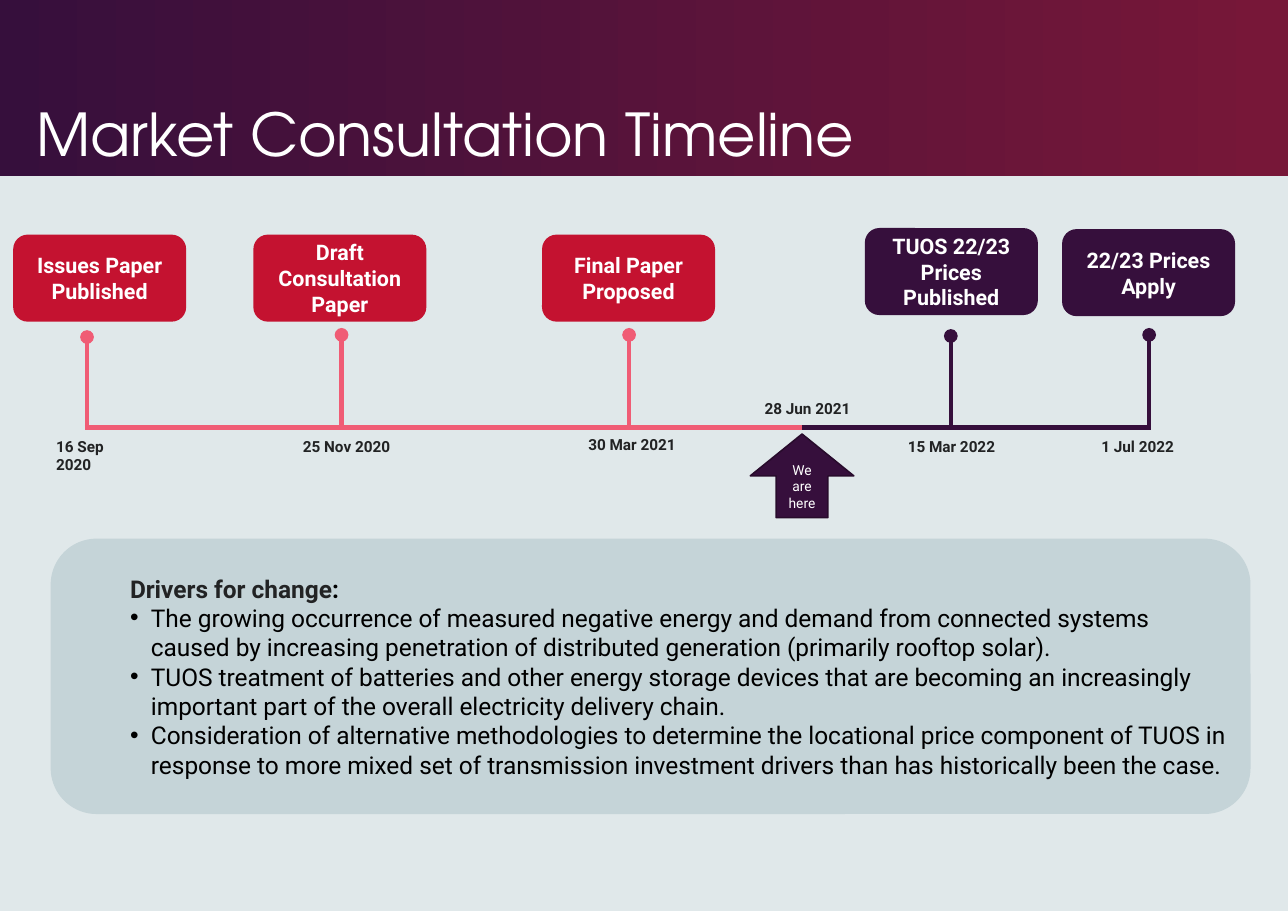
from dataclasses import dataclass

from lxml import etree
from pptx import Presentation
from pptx.dml.color import RGBColor
from pptx.enum.shapes import MSO_CONNECTOR, MSO_SHAPE
from pptx.enum.text import MSO_ANCHOR, MSO_AUTO_SIZE, PP_ALIGN
from pptx.oxml.ns import qn
from pptx.util import Inches, Pt

STRAIGHT = MSO_CONNECTOR.STRAIGHT
RECTANGLE = MSO_SHAPE.RECTANGLE
ROUNDED = MSO_SHAPE.ROUNDED_RECTANGLE
PANEL = MSO_SHAPE.FLOWCHART_ALTERNATE_PROCESS
UP_ARROW = MSO_SHAPE.UP_ARROW
LEFT, CENTER = PP_ALIGN.LEFT, PP_ALIGN.CENTER
MIDDLE, BOTTOM = MSO_ANCHOR.MIDDLE, MSO_ANCHOR.BOTTOM
NO_AUTOFIT = MSO_AUTO_SIZE.NONE

COLOURS = {
    "background": "E0E8EA",
    "plum": "360F3C",
    "wine": "771738",
    "red": "C41230",
    "pink": "F05C75",
    "panel": "C5D4D8",
    "ink": "222324",
    "outline": "280B2C",
    "black": "000000",
    "white": "FFFFFF",
}
BODY_FONT = "Roboto"
TITLE_FORMAT = {"name": "TeX Gyre Adventor", "size": Pt(38.6), "bold": False}
CARD_FORMAT = {"name": BODY_FONT, "size": Pt(14), "bold": True}
DATE_FORMAT = {"name": BODY_FONT, "size": Pt(10), "bold": True}
MARKER_FORMAT = {"name": BODY_FONT, "size": Pt(9), "bold": False}
HEADING_FORMAT = {"name": BODY_FONT, "size": Pt(16), "bold": True}
DRIVER_FORMAT = {"name": BODY_FONT, "size": Pt(16), "bold": False}

SLIDE_WIDTH, SLIDE_HEIGHT = 11.69, 8.27
CARD_WIDTH, CARD_HEIGHT = 1.57, 0.79
STEM_LENGTH = 0.83
DATE_WIDTH, DATE_HEIGHT = 0.83, 0.17
AXIS_Y = 3.88


@dataclass
class Milestone:
    label: str
    card_left: float
    card_top: float
    card_colour: str
    stem_x: float
    stem_top: float
    stem_colour: str


@dataclass
class DateLabel:
    text: str
    left: float
    top: float = 3.97
    width: float = DATE_WIDTH
    alignment: PP_ALIGN = LEFT


MILESTONES = [
    Milestone("Issues Paper Published", 0.12, 2.13, "red", 0.79, 3.06, "pink"),
    Milestone("Draft Consultation Paper", 2.3, 2.13, "red", 3.1, 3.04, "pink"),
    Milestone("Final Paper Proposed", 4.92, 2.13, "red", 5.71, 3.04, "pink"),
    Milestone("TUOS 22/23 Prices Published", 7.85, 2.07, "plum", 8.63, 3.05, "plum"),
    Milestone("22/23 Prices Apply", 9.64, 2.08, "plum", 10.43, 3.04, "plum"),
]
DATES = [
    DateLabel("16 Sep 2020", 0.51, width=0.72),
    DateLabel("25 Nov 2020", 2.75),
    DateLabel("30 Mar 2021", 5.34, top=3.95),
    DateLabel("28 Jun 2021", 6.94, top=3.62),
    DateLabel("15 Mar 2022", 8.22, alignment=CENTER),
    DateLabel("1 Jul 2022", 9.91, alignment=CENTER),
]
DRIVERS = [
    "The growing occurrence of measured negative energy and demand from connected systems "
    "caused by increasing penetration of distributed generation (primarily rooftop solar).",
    "TUOS treatment of batteries and other energy storage devices that are becoming an "
    "increasingly important part of the overall electricity delivery chain.",
    "Consideration of alternative methodologies to determine the locational price component "
    "of TUOS in response to more mixed set of transmission investment drivers than has "
    "historically been the case.",
]


def colour(name: str) -> RGBColor:
    return RGBColor.from_string(COLOURS[name])


def add_span(para, text: str, values: dict, colour_name: str) -> None:
    span = para.add_run()
    span.text = text
    for attribute, value in values.items():
        setattr(span.font, attribute, value)
    span.font.color.rgb = colour(colour_name)


def add_box(slide, kind, left: float, top: float, width: float, height: float, fill: str):
    box = slide.shapes.add_shape(kind, Inches(left), Inches(top), Inches(width), Inches(height))
    box.shadow.inherit = False
    box.fill.solid()
    box.fill.fore_color.rgb = colour(fill)
    box.line.fill.background()
    box.text_frame.word_wrap = True
    box.text_frame.vertical_anchor = MIDDLE
    return box


def add_label(box, text: str, values: dict) -> None:
    para = box.text_frame.paragraphs[0]
    para.alignment = CENTER
    add_span(para, text, values, "white")


def add_line(slide, start: tuple, end: tuple, colour_name: str, width: float, dot: bool = False) -> None:
    line = slide.shapes.add_connector(STRAIGHT, *(Inches(value) for value in start + end))
    line.line.color.rgb = colour(colour_name)
    line.line.width = Pt(width)
    if dot:
        etree.SubElement(line.line._get_or_add_ln(), qn("a:headEnd"), type="oval")
    etree.SubElement(line._element.spPr, qn("a:effectLst"))


def add_banner(slide) -> None:
    banner = add_box(slide, RECTANGLE, 0, 0, SLIDE_WIDTH, 1.6, "plum")
    banner.fill.gradient()
    banner.fill.gradient_angle = 0
    for stop, name, position in zip(banner.fill.gradient_stops, ("plum", "wine"), (0, 0.99)):
        stop.color.rgb = colour(name)
        stop.position = position
    slide.shapes._spTree.insert(2, banner._element)


def add_title(slide) -> None:
    title = slide.shapes.title
    title.left, title.top = Inches(0.23), Inches(0.16)
    title.width, title.height = Inches(8.63), Inches(1.43)
    frame = title.text_frame
    frame.auto_size = NO_AUTOFIT
    frame.vertical_anchor = BOTTOM
    para = frame.paragraphs[0]
    para.alignment = LEFT
    para.line_spacing = 0.9
    add_span(para, "Market Consultation Timeline", TITLE_FORMAT, "white")


def add_date(slide, date: DateLabel) -> None:
    box = slide.shapes.add_textbox(
        Inches(date.left), Inches(date.top), Inches(date.width), Inches(DATE_HEIGHT)
    )
    frame = box.text_frame
    frame.word_wrap = True
    for side in ("left", "top", "right", "bottom"):
        setattr(frame, f"margin_{side}", 0)
    para = frame.paragraphs[0]
    para.alignment = date.alignment
    add_span(para, date.text, DATE_FORMAT, "ink")


def indent(para, margin: float, first_line: float) -> None:
    para.level = 1
    para.alignment = LEFT
    properties = para._p.get_or_add_pPr()
    properties.set("marL", str(Inches(margin)))
    properties.set("indent", str(Inches(first_line)))


def add_drivers(slide) -> None:
    frame = add_box(slide, PANEL, 0.46, 4.89, 10.89, 2.5, "panel").text_frame
    heading = frame.paragraphs[0]
    indent(heading, 0.5, 0)
    add_span(heading, "Drivers for change", HEADING_FORMAT, "ink")
    add_span(heading, ":", HEADING_FORMAT, "black")
    for driver in DRIVERS:
        para = frame.add_paragraph()
        indent(para, 0.69, -0.19)
        properties = para._p.get_or_add_pPr()
        etree.SubElement(properties, qn("a:buFont"), typeface="Arial")
        etree.SubElement(properties, qn("a:buChar"), char="•")
        add_span(para, driver, DRIVER_FORMAT, "black")


def add_timeline(slide) -> None:
    add_line(slide, (0.77, AXIS_Y), (10.43, AXIS_Y), "pink", 2.75)
    for stone in MILESTONES:
        card = add_box(
            slide, ROUNDED, stone.card_left, stone.card_top, CARD_WIDTH, CARD_HEIGHT, stone.card_colour
        )
        add_label(card, stone.label, CARD_FORMAT)
        stem_end = (stone.stem_x, stone.stem_top + STEM_LENGTH)
        add_line(slide, (stone.stem_x, stone.stem_top), stem_end, stone.stem_colour, 3, dot=True)
    add_line(slide, (7.28, AXIS_Y), (10.45, AXIS_Y), "plum", 2.75)
    for date in DATES:
        add_date(slide, date)
    marker = add_box(slide, UP_ARROW, 6.81, 3.94, 0.94, 0.76, "plum")
    marker.line.color.rgb = colour("outline")
    marker.line.width = Pt(1)
    add_label(marker, "We are here", MARKER_FORMAT)


def main() -> None:
    deck = Presentation()
    deck.slide_width, deck.slide_height = Inches(SLIDE_WIDTH), Inches(SLIDE_HEIGHT)
    page = deck.slides.add_slide(deck.slide_layouts[5])
    page.background.fill.solid()
    page.background.fill.fore_color.rgb = colour("background")
    add_banner(page)
    add_title(page)
    add_drivers(page)
    add_timeline(page)
    deck.save("out.pptx")


if __name__ == "__main__":
    main()
